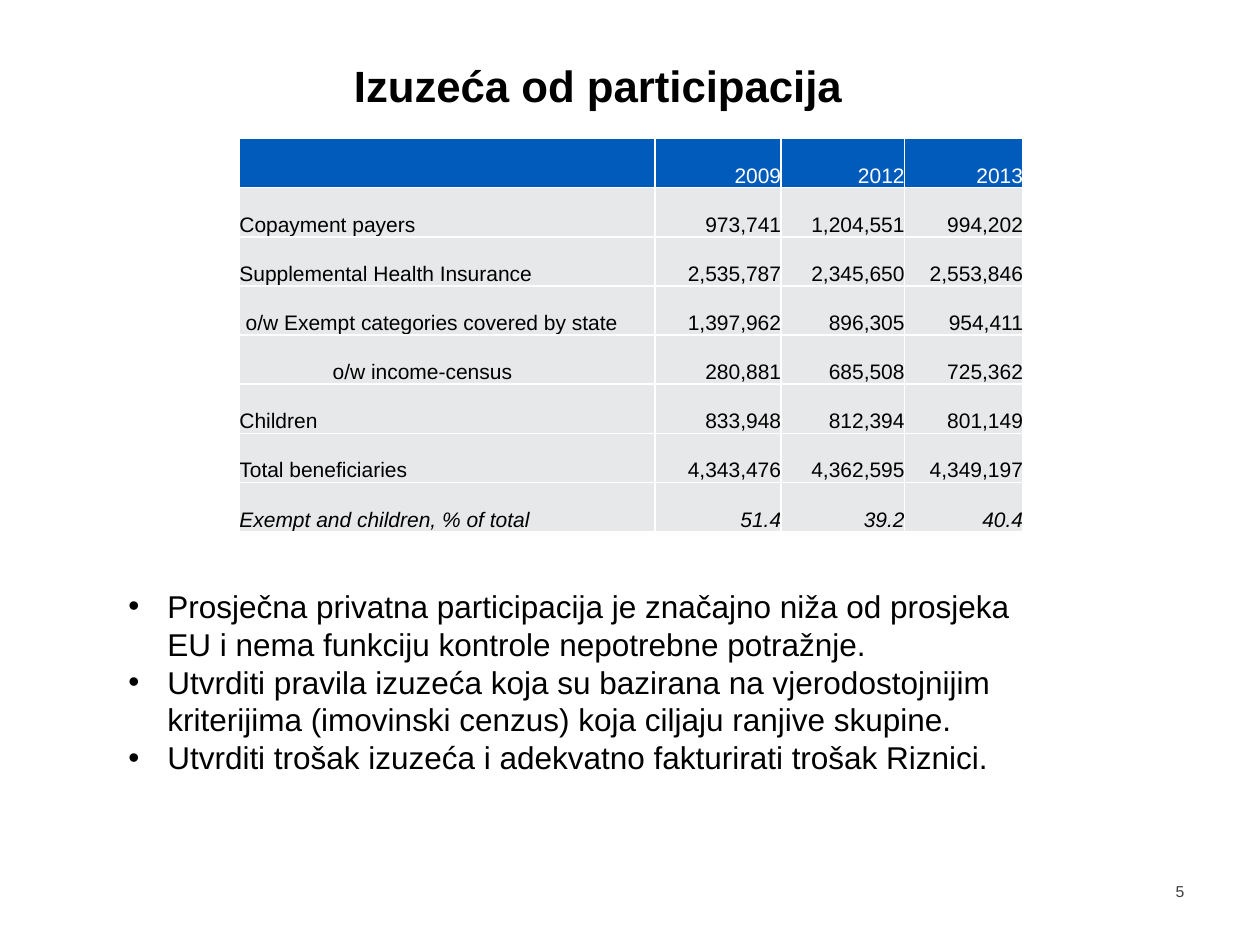
from dataclasses import dataclass

from lxml.etree import SubElement
from pptx import Presentation
from pptx.dml.color import RGBColor
from pptx.enum.text import MSO_ANCHOR, MSO_AUTO_SIZE, PP_ALIGN
from pptx.oxml.ns import qn
from pptx.util import Inches, Pt

BLACK = RGBColor(0x00, 0x00, 0x00)
WHITE = RGBColor(0xFF, 0xFF, 0xFF)
DARK_GREY = RGBColor(0x40, 0x40, 0x40)
HEADER_BLUE = RGBColor(0x00, 0x5B, 0xBB)
ROW_GREY = RGBColor(0xE7, 0xE8, 0xE9)

FONT = "Arial"
COLUMN_WIDTHS = (3.3, 1, 0.98, 0.94)
ROW_HEIGHT = 0.39
BULLET_INDENT = Inches(0.31)


@dataclass(frozen=True)
class TableRow:
    label: str
    values: tuple[str, str, str]
    indent: float = 0
    italic: bool = False
    fill: RGBColor = ROW_GREY
    color: RGBColor = BLACK


ROWS = (
    TableRow("", ("2009", "2012", "2013"), fill=HEADER_BLUE, color=WHITE),
    TableRow("Copayment payers", ("973,741", "1,204,551", "994,202")),
    TableRow("Supplemental Health Insurance", ("2,535,787", "2,345,650", "2,553,846")),
    TableRow("o/w Exempt categories covered by state",
             ("1,397,962", "896,305", "954,411"), indent=0.05),
    TableRow("o/w income-census", ("280,881", "685,508", "725,362"), indent=0.74),
    TableRow("Children", ("833,948", "812,394", "801,149")),
    TableRow("Total beneficiaries", ("4,343,476", "4,362,595", "4,349,197")),
    TableRow("Exempt and children, % of total", ("51.4", "39.2", "40.4"), italic=True),
)

CONCLUSIONS = (
    "Prosječna privatna participacija je značajno niža od prosjeka EU i nema "
    "funkciju kontrole nepotrebne potražnje.",
    "Utvrditi pravila izuzeća koja su bazirana na vjerodostojnijim kriterijima "
    "(imovinski cenzus) koja ciljaju ranjive skupine.",
    "Utvrditi trošak izuzeća i adekvatno fakturirati trošak Riznici.",
)


def style_paragraph(paragraph, size: float, color: RGBColor = BLACK,
                    bold: bool = False, italic: bool = False) -> None:
    font = paragraph.font
    font.name = FONT
    font.size = Pt(size)
    font.bold = bold
    font.italic = italic
    font.color.rgb = color


def set_margins(target, left: float = 0, top: float = 0,
                right: float = 0, bottom: float = 0) -> None:
    """Set the inner margins, in inches, of a text frame or table cell."""
    target.margin_left, target.margin_top = Inches(left), Inches(top)
    target.margin_right, target.margin_bottom = Inches(right), Inches(bottom)


def add_cell_borders(cell) -> None:
    properties = cell._tc.get_or_add_tcPr()
    for side in ("a:lnL", "a:lnR", "a:lnT", "a:lnB"):
        line = SubElement(properties, qn(side), w=str(Pt(1)))
        solid = SubElement(line, qn("a:solidFill"))
        SubElement(solid, qn("a:srgbClr"), val=str(WHITE))


def fill_cell(cell, text: str, row: TableRow, align: PP_ALIGN,
              indent: float = 0) -> None:
    add_cell_borders(cell)
    cell.fill.solid()
    cell.fill.fore_color.rgb = row.fill
    cell.vertical_anchor = MSO_ANCHOR.BOTTOM
    set_margins(cell, left=indent)
    cell.text = text
    paragraph = cell.text_frame.paragraphs[0]
    paragraph.alignment = align
    style_paragraph(paragraph, 12, row.color, italic=row.italic)


def format_title(title) -> None:
    title.left, title.top = Inches(0.39), Inches(0.42)
    title.width, title.height = Inches(8.71), Inches(0.48)
    frame = title.text_frame
    frame.text = "Izuzeća od participacija"
    frame.auto_size = MSO_AUTO_SIZE.NONE
    frame.vertical_anchor = MSO_ANCHOR.BOTTOM
    set_margins(frame, bottom=0.02)
    frame.paragraphs[0].alignment = PP_ALIGN.CENTER
    style_paragraph(frame.paragraphs[0], 25, bold=True)


def add_page_number(slide, number: str) -> None:
    box = slide.shapes.add_textbox(Inches(9.33), Inches(6.96), Inches(0.31), Inches(0.24))
    frame = box.text_frame
    frame.word_wrap = True
    frame.text = number
    set_margins(frame, top=0.04)
    style_paragraph(frame.paragraphs[0], 9, DARK_GREY)


def add_conclusions(slide) -> None:
    box = slide.shapes.add_textbox(Inches(0.92), Inches(4.61), Inches(7.28), Inches(1.92))
    frame = box.text_frame
    frame.word_wrap = True
    frame.text = "\n".join(CONCLUSIONS)
    for paragraph in frame.paragraphs:
        properties = paragraph._p.get_or_add_pPr()
        properties.set("marL", str(BULLET_INDENT))
        properties.set("indent", str(-BULLET_INDENT))
        SubElement(properties, qn("a:buFont"), typeface=FONT)
        SubElement(properties, qn("a:buChar"), char="•")
        style_paragraph(paragraph, 18)


def add_beneficiary_table(slide) -> None:
    table = slide.shapes.add_table(
        len(ROWS), len(COLUMN_WIDTHS), Inches(1.9), Inches(1.1),
        Inches(sum(COLUMN_WIDTHS)), Inches(ROW_HEIGHT * len(ROWS))).table
    for column, width in zip(table.columns, COLUMN_WIDTHS):
        column.width = Inches(width)
    for index, row in enumerate(ROWS):
        table.rows[index].height = Inches(ROW_HEIGHT)
        fill_cell(table.cell(index, 0), row.label, row, PP_ALIGN.LEFT, row.indent)
        for column, value in enumerate(row.values, start=1):
            fill_cell(table.cell(index, column), value, row, PP_ALIGN.RIGHT)


def main() -> None:
    presentation = Presentation()
    presentation.slide_width, presentation.slide_height = Inches(10), Inches(7.5)
    slide = presentation.slides.add_slide(presentation.slide_layouts[5])
    format_title(slide.shapes.title)
    add_page_number(slide, "5")
    add_conclusions(slide)
    add_beneficiary_table(slide)
    presentation.save("out.pptx")


if __name__ == "__main__":
    main()
